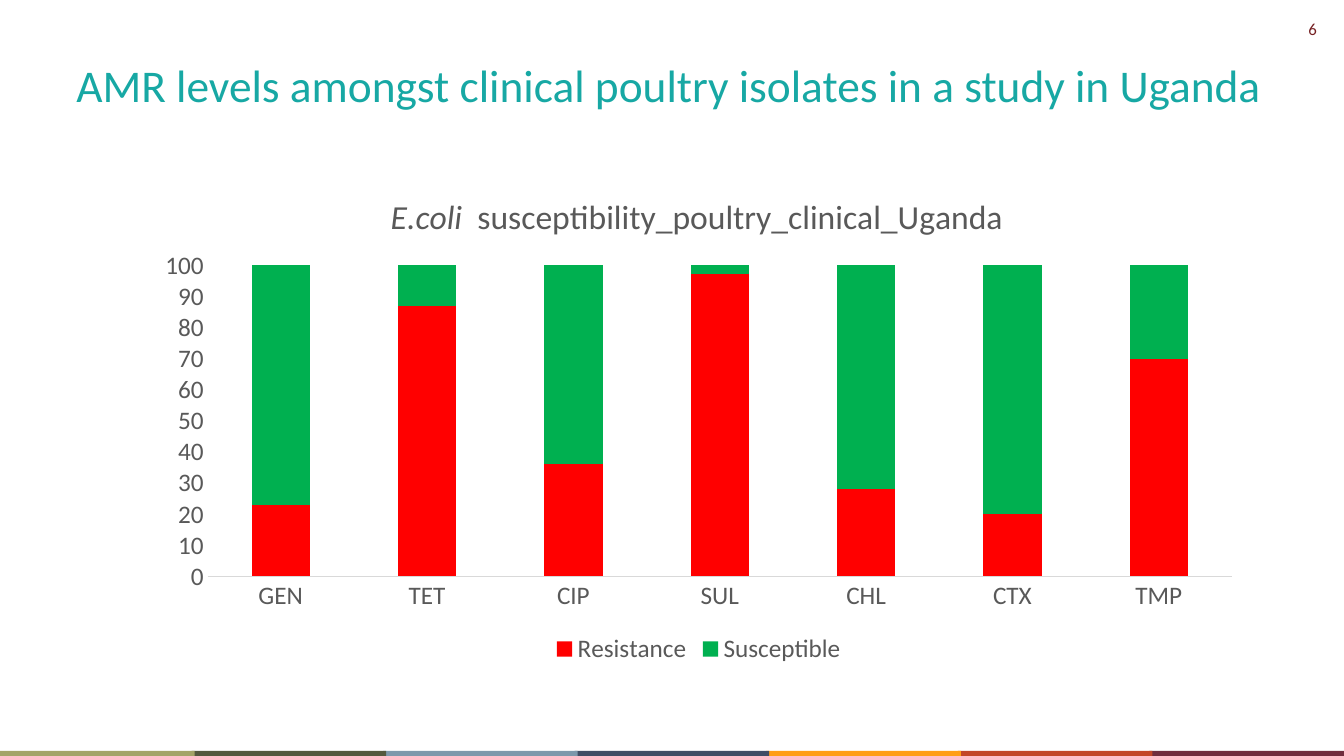
from dataclasses import dataclass

from lxml import etree
from pptx import Presentation
from pptx.chart.data import CategoryChartData
from pptx.dml.color import RGBColor
from pptx.enum.chart import XL_CHART_TYPE, XL_LEGEND_POSITION, XL_TICK_MARK
from pptx.enum.shapes import MSO_SHAPE
from pptx.enum.text import MSO_ANCHOR, PP_ALIGN
from pptx.oxml.ns import qn
from pptx.util import Inches, Pt

STACKED = XL_CHART_TYPE.COLUMN_STACKED
LEGEND_BOTTOM = XL_LEGEND_POSITION.BOTTOM
NO_TICK = XL_TICK_MARK.NONE
RECTANGLE = MSO_SHAPE.RECTANGLE
TOP, MIDDLE = MSO_ANCHOR.TOP, MSO_ANCHOR.MIDDLE
LEFT, RIGHT = PP_ALIGN.LEFT, PP_ALIGN.RIGHT


@dataclass(frozen=True)
class Theme:
    font: str = "Calibri"
    heading: str = "17A8A4"
    page_number: str = "762123"
    chart_text: str = "595959"
    axis_line: str = "D9D9D9"
    resistance: str = "FF0000"
    susceptible: str = "00B050"
    stripe: tuple = ("A3A467", "53593E", "7C98AB", "404E65",
                     "FF9E16", "C34628", "712C3D")
    heading_size: float = 32.4
    chart_title_size: float = 24
    chart_size: float = 18
    page_number_size: float = 12


THEME = Theme()
ANTIBIOTICS = ("GEN", "TET", "CIP", "SUL", "CHL", "CTX", "TMP")
RESISTANCE = (23, 87, 36, 97, 28, 20, 70)
SUSCEPTIBLE = tuple(100 - share for share in RESISTANCE)


def set_layout(parent, **fractions):
    """Fix the place of a chart part, in fractions of the chart area."""
    layout = parent.find(qn("c:layout"))
    if layout is None:
        layout = etree.Element(qn("c:layout"))
        parent.insert(0, layout)
    manual = etree.SubElement(layout, qn("c:manualLayout"))
    if "w" in fractions:
        etree.SubElement(manual, qn("c:layoutTarget")).set("val", "inner")
    for side in ("x", "y"):
        etree.SubElement(manual, qn(f"c:{side}Mode")).set("val", "edge")
    for key, fraction in fractions.items():
        etree.SubElement(manual, qn(f"c:{key}")).set("val", str(fraction))


class SlideBuilder:
    def __init__(self, slide, theme):
        self.slide = slide
        self.theme = theme

    def style_font(self, font, size, color):
        font.name = self.theme.font
        font.size = Pt(size)
        font.color.rgb = RGBColor.from_string(color)

    def text(self, wording, box, size, color, align=LEFT, anchor=TOP):
        frame = self.slide.shapes.add_textbox(*map(Inches, box)).text_frame
        frame.word_wrap = True
        frame.vertical_anchor = anchor
        paragraph = frame.paragraphs[0]
        paragraph.alignment = align
        run = paragraph.add_run()
        run.text = wording
        self.style_font(run.font, size, color)

    def bar(self, box, color):
        bar = self.slide.shapes.add_shape(RECTANGLE, *map(Inches, box))
        bar.shadow.inherit = False
        bar.fill.solid()
        bar.fill.fore_color.rgb = RGBColor.from_string(color)
        bar.line.fill.background()

    def stacked_chart(self, box, categories, series, title_runs):
        """Series are (name, values, colour); title runs are (text, italic)."""
        theme = self.theme
        data = CategoryChartData()
        data.categories = categories
        for name, values, _ in series:
            data.add_series(name, values)
        chart = self.slide.shapes.add_chart(
            STACKED, *map(Inches, box), data).chart
        self.style_font(chart.font, theme.chart_size, theme.chart_text)

        plot = chart.plots[0]
        plot.gap_width = 150
        plot.overlap = 100
        plot.vary_by_categories = False
        for drawn, (_, _, color) in zip(plot.series, series):
            drawn.format.fill.solid()
            drawn.format.fill.fore_color.rgb = RGBColor.from_string(color)

        for axis in (chart.category_axis, chart.value_axis):
            axis.major_tick_mark = axis.minor_tick_mark = NO_TICK
            axis.has_major_gridlines = False
            self.style_font(axis.tick_labels.font, theme.chart_size,
                            theme.chart_text)
        baseline = chart.category_axis.format.line
        baseline.width = Pt(0.75)
        baseline.color.rgb = RGBColor.from_string(theme.axis_line)
        shares = chart.value_axis
        shares.format.line.fill.background()
        shares.minimum_scale, shares.maximum_scale = 0, 100
        shares.major_unit = 10

        chart.has_legend = True
        chart.legend.position = LEGEND_BOTTOM
        chart.legend.include_in_layout = False
        self.style_font(chart.legend.font, theme.chart_size, theme.chart_text)

        chart.has_title = True
        heading = chart.chart_title.text_frame.paragraphs[0]
        for wording, italic in title_runs:
            run = heading.add_run()
            run.text = wording
            self.style_font(run.font, theme.chart_title_size, theme.chart_text)
            run.font.italic = italic
            run.font.bold = False
        set_layout(chart.chart_title.element, x=0.22, y=0.04)
        plot_area = chart.element.find(".//" + qn("c:plotArea"))
        set_layout(plot_area, x=0.058, y=0.185, w=0.922, h=0.628)


def main():
    presentation = Presentation()
    presentation.slide_width = Inches(13.33)
    presentation.slide_height = Inches(7.5)
    slide = presentation.slides.add_slide(presentation.slide_layouts[6])
    builder = SlideBuilder(slide, THEME)

    builder.text("6", (12.46, 0.14, 0.7, 0.3), THEME.page_number_size,
                 THEME.page_number, align=RIGHT)
    # Each stripe slightly covers the start of the next one.
    for index, color in reversed(list(enumerate(THEME.stripe))):
        builder.bar((index * 1.9, 7.45, 1.93, 0.06), color)
    builder.text(
        "AMR levels amongst clinical poultry isolates in a study in Uganda",
        (0.66, 0.47, 12.5, 0.74), THEME.heading_size, THEME.heading,
        anchor=MIDDLE)
    builder.stacked_chart(
        (1.42, 1.72, 11.02, 4.92), ANTIBIOTICS,
        (("Resistance", RESISTANCE, THEME.resistance),
         ("Susceptible", SUSCEPTIBLE, THEME.susceptible)),
        (("E.coli ", True), (" susceptibility_poultry_clinical_Uganda", False)))
    presentation.save("out.pptx")


if __name__ == "__main__":
    main()
